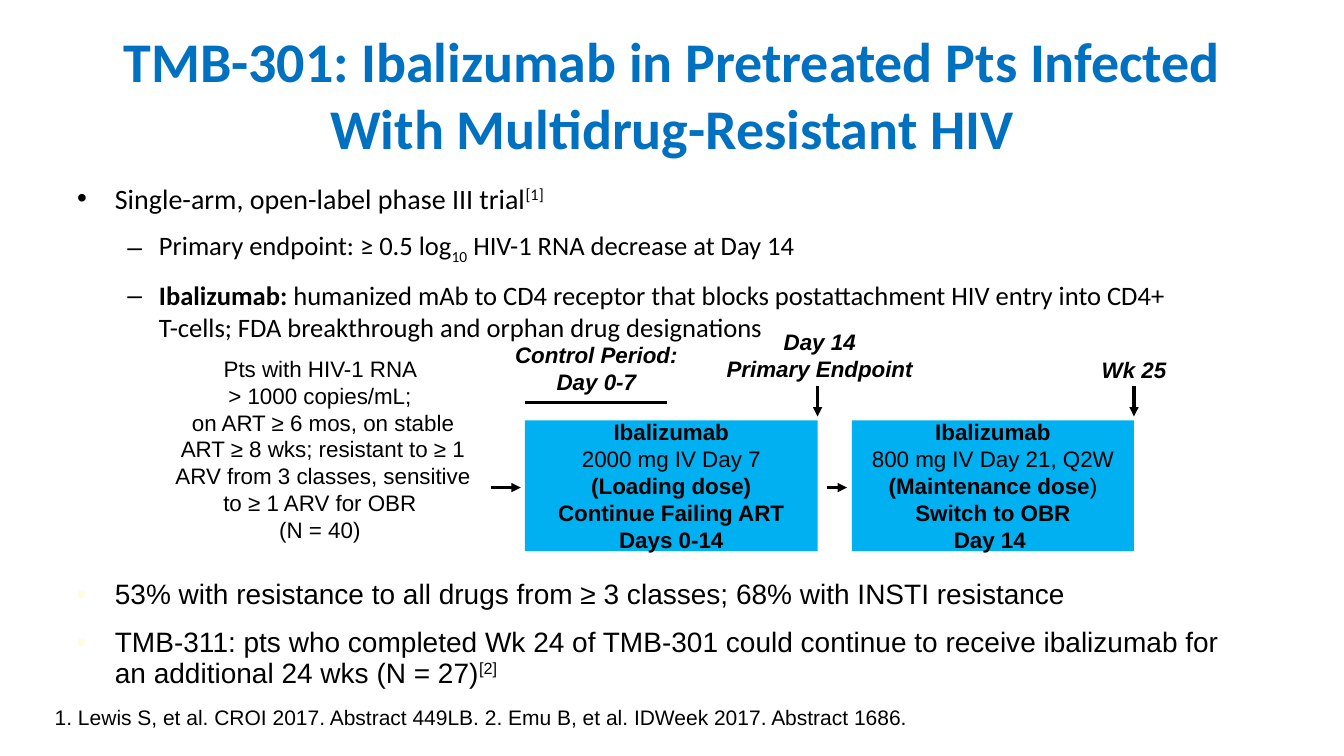
from dataclasses import dataclass

from lxml import etree
from pptx import Presentation
from pptx.dml.color import RGBColor
from pptx.enum.shapes import MSO_CONNECTOR, MSO_SHAPE
from pptx.enum.text import MSO_ANCHOR, MSO_AUTO_SIZE, PP_ALIGN
from pptx.oxml.ns import qn
from pptx.util import Pt

CENTER, LEFT = PP_ALIGN.CENTER, PP_ALIGN.LEFT
TOP, MIDDLE, BOTTOM = MSO_ANCHOR.TOP, MSO_ANCHOR.MIDDLE, MSO_ANCHOR.BOTTOM
GROW, FIXED = MSO_AUTO_SIZE.SHAPE_TO_FIT_TEXT, MSO_AUTO_SIZE.NONE
RECTANGLE, STRAIGHT = MSO_SHAPE.RECTANGLE, MSO_CONNECTOR.STRAIGHT
BASELINES = {"superscript": "30000", "subscript": "-25000"}


@dataclass(frozen=True)
class Theme:
    title_color: str = "0070C0"
    ink: str = "000000"
    box_fill: str = "00B0F0"
    pale_bullet: str = "FEFDDE"
    heading_font: str = "Calibri"
    diagram_font: str = "Arial"
    title_size: float = 40
    body_size: float = 20
    detail_size: float = 19
    diagram_size: float = 16
    reference_size: float = 15
    line_width: float = 2.25


@dataclass(frozen=True)
class Bullet:
    character: str
    margin: float
    hanging: float
    before: float
    color: str = Theme.ink
    level: int = 0
    line_spacing: float = 1.0
    after: float = 3


class TrialSlide:
    def __init__(self, slide, theme):
        self.slide = slide
        self.theme = theme

    def add_runs(self, paragraph, parts, size, font, color=None, alignment=LEFT):
        paragraph.alignment = alignment
        for text, *styles in parts:
            for index, line in enumerate(text.split("\n")):
                if index:
                    paragraph.add_line_break()
                run = paragraph.add_run()
                run.text = line
                run.font.size = Pt(size)
                run.font.name = font
                run.font.bold = "bold" in styles
                run.font.italic = "italic" in styles
                run.font.color.rgb = RGBColor.from_string(color or self.theme.ink)
                for style in BASELINES.keys() & set(styles):
                    run.font._element.set("baseline", BASELINES[style])

    def fill_frame(self, frame, paragraphs, size, font, color=None,
                   alignment=LEFT, anchor=TOP, wrap=True, auto_size=FIXED):
        frame.word_wrap = wrap
        frame.auto_size = auto_size
        frame.vertical_anchor = anchor
        for index, parts in enumerate(paragraphs):
            paragraph = frame.add_paragraph() if index else frame.paragraphs[0]
            self.add_runs(paragraph, parts, size, font, color, alignment)

    def text(self, bounds, paragraphs, size, font, **options):
        shape = self.slide.shapes.add_textbox(*map(Pt, bounds))
        self.fill_frame(shape.text_frame, paragraphs, size, font, **options)

    def label(self, bounds, paragraphs):
        self.text(bounds, paragraphs, self.theme.diagram_size,
                  self.theme.diagram_font, alignment=CENTER, auto_size=GROW)

    def bullets(self, bounds, items, font):
        frame = self.slide.shapes.add_textbox(*map(Pt, bounds)).text_frame
        frame.word_wrap = True
        for index, (bullet, size, parts) in enumerate(items):
            paragraph = frame.add_paragraph() if index else frame.paragraphs[0]
            self.add_runs(paragraph, parts, size, font)
            paragraph.level = bullet.level
            paragraph.line_spacing = bullet.line_spacing
            paragraph.space_before = Pt(bullet.before)
            paragraph.space_after = Pt(bullet.after)
            properties = paragraph._p.get_or_add_pPr()
            properties.set("marL", str(Pt(bullet.margin)))
            properties.set("indent", str(-Pt(bullet.hanging)))
            color = etree.SubElement(properties, qn("a:buClr"))
            etree.SubElement(color, qn("a:srgbClr"), val=bullet.color)
            etree.SubElement(properties, qn("a:buFont"), typeface="Arial")
            etree.SubElement(properties, qn("a:buChar"), char=bullet.character)

    def dose_box(self, bounds, paragraphs):
        shape = self.slide.shapes.add_shape(RECTANGLE, *map(Pt, bounds))
        shape.shadow.inherit = False
        shape.fill.solid()
        shape.fill.fore_color.rgb = RGBColor.from_string(self.theme.box_fill)
        shape.line.fill.background()
        self.fill_frame(shape.text_frame, paragraphs, self.theme.diagram_size,
                        self.theme.diagram_font, alignment=CENTER,
                        anchor=MIDDLE, wrap=False)

    def line(self, start, end, arrow=True):
        connector = self.slide.shapes.add_connector(STRAIGHT, *map(Pt, start + end))
        connector.line.width = Pt(self.theme.line_width)
        connector.line.color.rgb = RGBColor.from_string(self.theme.ink)
        if arrow:
            outline = connector.line._get_or_add_ln()
            etree.SubElement(outline, qn("a:tailEnd"), type="triangle")
        etree.SubElement(connector._element.spPr, qn("a:effectLst"))


def main():
    theme = Theme()
    presentation = Presentation()
    presentation.slide_width = Pt(960)
    presentation.slide_height = Pt(540)
    slide = presentation.slides.add_slide(presentation.slide_layouts[6])
    trial = TrialSlide(slide, theme)

    trial.text((48, 21.6, 864, 90), [
        [("TMB-301: Ibalizumab in Pretreated Pts Infected "
          "With Multidrug-Resistant HIV", "bold")],
    ], theme.title_size, theme.heading_font, color=theme.title_color,
        alignment=CENTER, anchor=MIDDLE)

    main_point = Bullet("•", 27, 27, 8)
    detail = Bullet("–", 58.5, 22.5, 7, level=1)
    trial.bullets((48, 126, 864, 356), [
        (main_point, theme.body_size, [
            ("Single-arm, open-label phase III trial",), ("[1]", "superscript")]),
        (detail, theme.detail_size, [
            ("Primary endpoint: ≥ 0.5 log",), ("10", "subscript"),
            (" HIV-1 RNA decrease at Day 14",)]),
        (detail, theme.detail_size, [
            ("Ibalizumab: ", "bold"),
            ("humanized mAb to CD4 receptor that blocks postattachment HIV entry "
             "into CD4+ \nT-cells; FDA breakthrough and orphan drug designations",)]),
    ], theme.heading_font)

    trial.text((32, 499.5, 684, 25.5), [
        [("1. Lewis S, et al. CROI 2017. Abstract 449LB. 2. "
          "Emu B, et al. IDWeek 2017. Abstract 1686.",)],
    ], theme.reference_size, theme.diagram_font, anchor=BOTTOM, auto_size=GROW)

    trial.label((116, 250, 229.5, 143), [
        [("Pts with HIV-1 RNA \n> 1000 copies/mL; ",)],
        [("on ART ≥ 6 mos, on stable ART ≥ 8 wks; resistant to ≥ 1 ARV "
          "from 3 classes, sensitive to ≥ 1 ARV for OBR ",)],
        [("(N = 40) ",)],
    ])
    trial.label((310.5, 240, 231, 46), [
        [("Control Period:", "bold", "italic")], [("Day 0-7", "bold", "italic")]])
    trial.label((470, 231, 231, 46), [
        [("Day 14\nPrimary Endpoint", "bold", "italic")]])
    trial.label((770.5, 251, 79, 25.5), [[("Wk 25", "bold", "italic")]])

    box_top, box_height = 300.25, 93.5
    loading_left, loading_right = 375, 584
    maintenance_left, maintenance_right = 608.5, 810
    trial.dose_box((loading_left, box_top, loading_right - loading_left, box_height), [
        [("Ibalizumab", "bold")],
        [("2000 mg IV Day 7",)],
        [("(Loading dose)", "bold")],
        [("Continue Failing ART", "bold")],
        [("Days 0-14", "bold")],
    ])
    trial.dose_box((maintenance_left, box_top,
                    maintenance_right - maintenance_left, box_height), [
        [("Ibalizumab", "bold")],
        [("800 mg IV Day 21, Q2W",)],
        [("(Maintenance dose", "bold"), (")",)],
        [("Switch to OBR", "bold")],
        [("Day 14 ", "bold")],
    ])

    flow_y = 348.25
    for start, end in ((350.5, 372), (590.5, 605)):
        trial.line((start, flow_y), (end, flow_y))
    for box_end in (loading_right, maintenance_right):
        trial.line((box_end, 276), (box_end, 297.5))
    trial.line((loading_left, 287.25), (476.5, 287.25), arrow=False)

    finding = Bullet("▪", 27, 27, 10, color=theme.pale_bullet, line_spacing=0.9)
    trial.bullets((48, 411, 856, 93.5), [
        (finding, theme.body_size, [
            ("53% with resistance to all drugs from ≥ 3 classes; "
             "68% with INSTI resistance",)]),
        (finding, theme.body_size, [
            ("TMB-311: pts who completed Wk 24 of TMB-301 could continue to "
             "receive ibalizumab for an additional 24 wks (N = 27)",),
            ("[2]", "superscript")]),
    ], theme.diagram_font)

    presentation.save("out.pptx")


if __name__ == "__main__":
    main()
